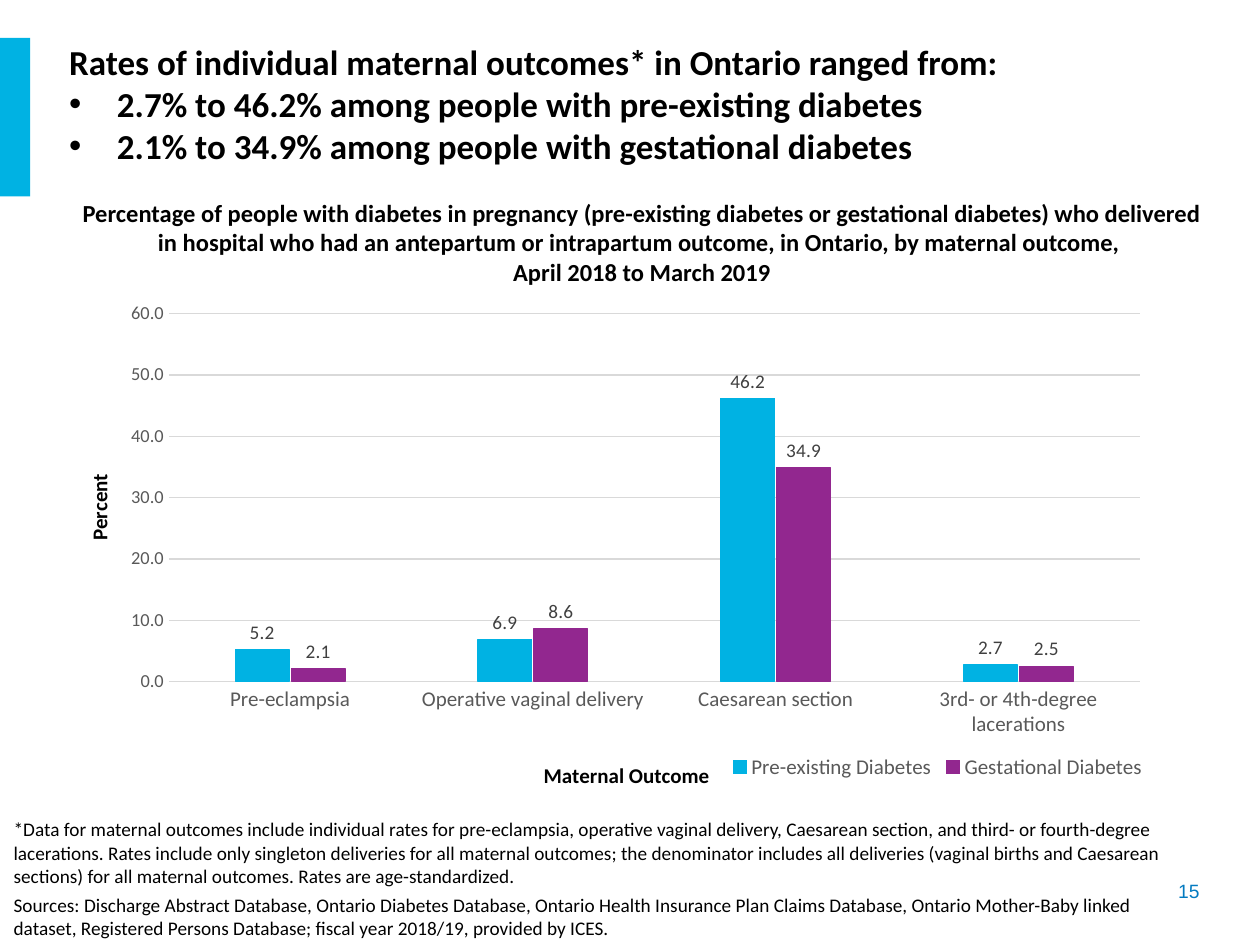
import copy

import pptx
import pptx.chart.data
import pptx.dml.color
import pptx.enum.chart
import pptx.enum.dml
import pptx.enum.shapes
import pptx.enum.text
import pptx.oxml
import pptx.oxml.ns
import pptx.util
from pptx.util import Inches, Pt

THEME = {
    "font": "Calibri", "number_font": "Arial",
    "black": "000000", "white": "FFFFFF", "grid": "D9D9D9", "axis": "595959",
    "label": "404040", "blue": "00B2E3", "purple": "92278F", "number": "047BC1",
    "heading_size": 20, "subtitle_size": 14, "chart_size": 12,
    "small_size": 11, "tick_size": 10.5,
}

HEADING = ["Rates of individual maternal outcomes* in Ontario ranged from:"]
RANGES = [
    "2.7% to 46.2% among people with pre-existing diabetes",
    "2.1% to 34.9% among people with gestational diabetes",
]
SUBTITLE = [
    "Percentage of people with diabetes in pregnancy (pre-existing diabetes or "
    "gestational diabetes) who delivered in hospital who had an antepartum or "
    "intrapartum outcome, in Ontario, by maternal outcome, \nApril 2018 to March 2019",
]
NOTES = [
    "*Data for maternal outcomes include individual rates for pre-eclampsia, operative "
    "vaginal delivery, Caesarean section, and third- or fourth-degree lacerations. Rates "
    "include only singleton deliveries for all maternal outcomes; the denominator includes "
    "all deliveries (vaginal births and Caesarean sections) for all maternal outcomes. "
    "Rates are age-standardized.",
    "Sources: Discharge Abstract Database, Ontario Diabetes Database, Ontario Health "
    "Insurance Plan Claims Database, Ontario Mother-Baby linked \ndataset, Registered "
    "Persons Database; fiscal year 2018/19, provided by ICES.",
]
PAGE_NUMBER = ["15"]

OUTCOMES = ["Pre-eclampsia", "Operative vaginal delivery", "Caesarean section",
            "3rd- or 4th-degree lacerations"]
SERIES = [
    ("Pre-existing Diabetes", "blue", (5.2, 6.9, 46.2, 2.7)),
    ("Gestational Diabetes", "purple", (2.1, 8.6, 34.9, 2.5)),
]

BOXES = {
    "bar": (0, 0.3, 0.24, 1.26),
    "heading": (0.45, 0.27, 8.89, 1.11),
    "subtitle": (0.46, 1.52, 9.27, 0.81),
    "chart": (0.56, 2.33, 8.66, 4),
    "notes": (0.01, 6.44, 9.86, 1.08),
    "number": (8.45, 6.93, 1.17, 0.29),
}
# Fractions of the chart frame: left, top and, where given, width, height
LAYOUTS = {
    "plot": (0.09, 0.04, 0.89, 0.73),
    "legend": (0.6, 0.9, 0.39, 0.08),
    "category_title": (0.43, 0.92),
    "value_title": (0.01, 0.35),
}

ALIGN = pptx.enum.text.PP_ALIGN
CHART = pptx.enum.chart


def rgb(name):
    return pptx.dml.color.RGBColor.from_string(THEME[name])


def box(name):
    return [Inches(v) for v in BOXES[name]]


def set_font(font, size, color="black", bold=False, face="font"):
    values = {"name": THEME[face], "size": Pt(THEME[size]), "bold": bold}
    for key, value in values.items():
        setattr(font, key, value)
    font.color.rgb = rgb(color)


def write(tf, lines, size, align=ALIGN.LEFT, before=0, **font):
    """Fill a text frame, giving line breaks the size of their text."""
    tf.word_wrap = True
    tf.vertical_anchor = pptx.enum.text.MSO_ANCHOR.TOP
    for i, line in enumerate(lines):
        p = tf.paragraphs[0] if i == 0 else tf.add_paragraph()
        p.text = line.replace("\n", "\v")
        p.alignment = align
        p.space_before = Pt(before)
        for r in p.runs:
            set_font(r.font, size, **font)
        for br in p._p.findall(pptx.oxml.ns.qn("a:br")):
            br.append(copy.deepcopy(p.runs[0]._r.rPr))


def add_bullet(p, indent):
    pPr = p._p.get_or_add_pPr()
    pPr.set("marL", str(indent))
    pPr.set("indent", str(-indent))
    for tag, attr, value in (("buFont", "typeface", "Arial"), ("buChar", "char", "•")):
        pPr.append(pptx.oxml.parse_xml(
            f'<a:{tag} {pptx.oxml.ns.nsdecls("a")} {attr}="{value}"/>'))


def place(element, name, before):
    """Give a chart part a manual layout, inserted ahead of the first tag found in before."""
    for old in element.findall(pptx.oxml.ns.qn("c:layout")):
        element.remove(old)
    inner = '<c:layoutTarget val="inner"/>' if name == "plot" else ""
    fractions = LAYOUTS[name]
    modes = "".join(f'<c:{k}Mode val="edge"/>' for k in "xy")
    sizes = "".join(f'<c:{k} val="{v}"/>' for k, v in zip("xywh", fractions))
    layout = pptx.oxml.parse_xml(
        f'<c:layout {pptx.oxml.ns.nsdecls("c")}><c:manualLayout>{inner}{modes}{sizes}'
        "</c:manualLayout></c:layout>")
    followers = [pptx.oxml.ns.qn("c:" + tag) for tag in before]
    target = next((e for e in element if e.tag in followers), None)
    if target is None:
        element.append(layout)
    else:
        target.addprevious(layout)


def format_axis(axis, title, layout, size, line):
    axis.major_tick_mark = axis.minor_tick_mark = CHART.XL_TICK_MARK.NONE
    set_font(axis.tick_labels.font, size, "axis")
    write(axis.axis_title.text_frame, [title], "chart_size", ALIGN.CENTER, bold=True)
    place(axis.axis_title._element, layout, ["overlay", "spPr", "txPr"])
    if line:
        axis.format.line.color.rgb = rgb("grid")
        axis.format.line.width = Pt(0.75)
    else:
        axis.format.line.fill.background()


def add_outcome_chart(s):
    data = pptx.chart.data.CategoryChartData(number_format="0.0")
    data.categories = OUTCOMES
    for name, _, values in SERIES:
        data.add_series(name, values)
    chart = s.shapes.add_chart(
        CHART.XL_CHART_TYPE.COLUMN_CLUSTERED, *box("chart"), data).chart
    chart.has_title = False
    set_font(chart.font, "small_size")

    plot = chart.plots[0]
    for key, value in {"gap_width": 248, "overlap": -4, "vary_by_categories": False}.items():
        setattr(plot, key, value)
    for series, (_, color, _) in zip(plot.series, SERIES):
        series.format.fill.solid()
        series.format.fill.fore_color.rgb = rgb(color)
        series.format.line.color.rgb = rgb(color)
        series.format.line.width = Pt(0.75)
        labels = series.data_labels
        values = {"show_value": True, "number_format": "0.0",
                  "number_format_is_linked": False,
                  "position": CHART.XL_LABEL_POSITION.OUTSIDE_END}
        for key, value in values.items():
            setattr(labels, key, value)
        set_font(labels.font, "small_size", "label")

    format_axis(chart.category_axis, "Maternal Outcome", "category_title", "chart_size", True)
    axis = chart.value_axis
    format_axis(axis, "Percent", "value_title", "tick_size", False)
    for key, value in {"minimum_scale": 0, "maximum_scale": 60, "major_unit": 10}.items():
        setattr(axis, key, value)
    axis.tick_labels.number_format = "0.0"
    axis.tick_labels.number_format_is_linked = False
    axis.major_gridlines.format.line.color.rgb = rgb("grid")
    axis.major_gridlines.format.line.width = Pt(0.75)

    chart.has_legend = True
    chart.legend.position = CHART.XL_LEGEND_POSITION.BOTTOM
    chart.legend.include_in_layout = False
    set_font(chart.legend.font, "chart_size", "axis")
    place(chart.legend._element, "legend", ["overlay", "spPr", "txPr"])
    place(chart._chartSpace.chart.plotArea, "plot", ["barChart"])


def add_rectangle(s, name):
    sp = s.shapes.add_shape(pptx.enum.shapes.MSO_SHAPE.RECTANGLE, *box(name))
    sp.shadow.inherit = False
    return sp


def main():
    prs = pptx.Presentation()
    prs.slide_width, prs.slide_height = Inches(10), Inches(7.5)
    s = prs.slides.add_slide(prs.slide_layouts[6])

    bar = add_rectangle(s, "bar")
    bar.fill.solid()
    bar.fill.fore_color.rgb = rgb("blue")
    bar.line.fill.background()

    heading = add_rectangle(s, "heading")
    heading.fill.background()
    heading.line.color.rgb = rgb("white")
    heading.line.width = Pt(3)
    heading.line.dash_style = pptx.enum.dml.MSO_LINE.ROUND_DOT
    write(heading.text_frame, HEADING + RANGES, "heading_size", bold=True)
    for p in heading.text_frame.paragraphs[len(HEADING):]:
        add_bullet(p, Inches(0.38))

    for name, lines, values in (
        ("number", PAGE_NUMBER, {"size": "small_size", "align": ALIGN.RIGHT, "before": 5.5,
                                 "color": "number", "face": "number_font"}),
        ("notes", NOTES, {"size": "small_size", "before": 3.3}),
        ("subtitle", SUBTITLE, {"size": "subtitle_size", "align": ALIGN.CENTER, "bold": True}),
    ):
        write(s.shapes.add_textbox(*box(name)).text_frame, lines, **values)

    add_outcome_chart(s)
    prs.save("out.pptx")


if __name__ == "__main__":
    main()
